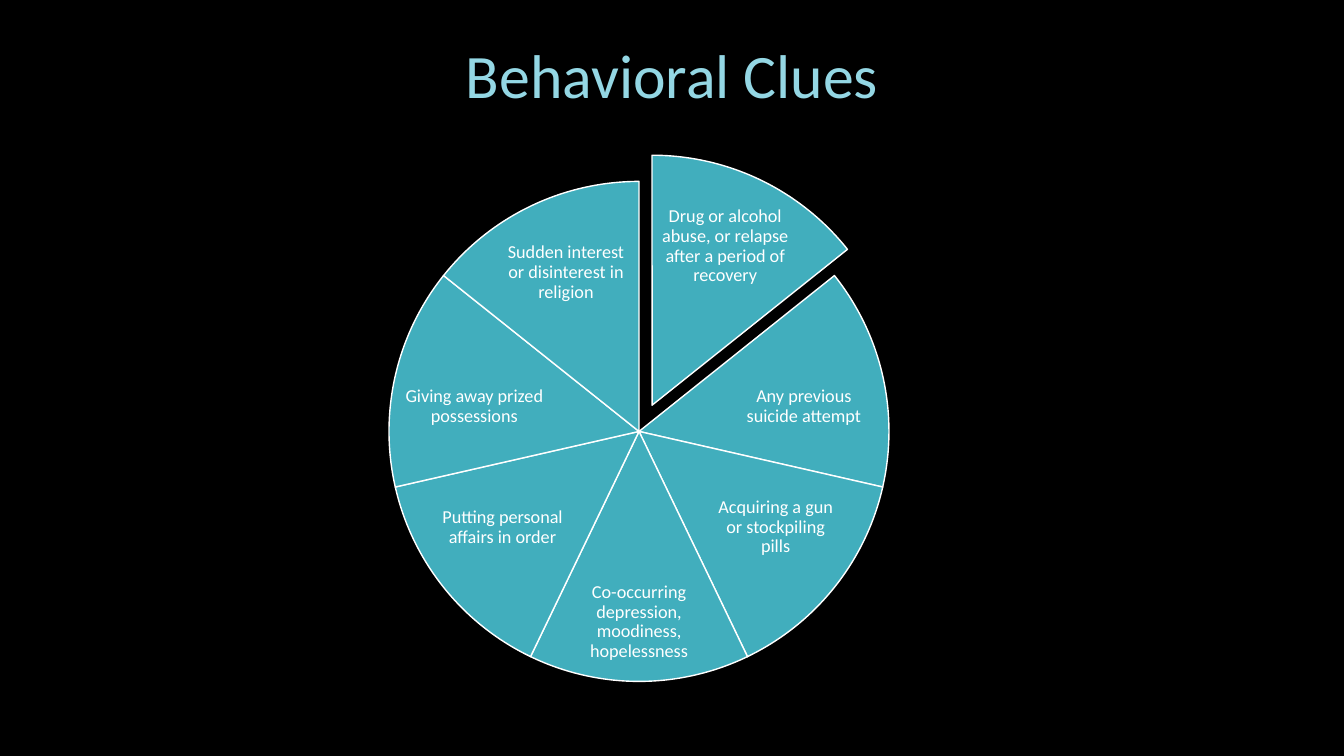
from dataclasses import dataclass

from pptx import Presentation
from pptx.dml.color import RGBColor
from pptx.enum.shapes import MSO_SHAPE
from pptx.enum.text import MSO_ANCHOR, PP_ALIGN
from pptx.slide import Slide
from pptx.util import Inches, Pt

PIE = MSO_SHAPE.PIE
CENTER = PP_ALIGN.CENTER
TOP = MSO_ANCHOR.TOP
MIDDLE = MSO_ANCHOR.MIDDLE

SLIDE_WIDTH = Inches(13.333)
SLIDE_HEIGHT = Inches(7.5)


@dataclass(frozen=True)
class Theme:
    font: str = "Calibri"
    background: RGBColor = RGBColor(0x00, 0x00, 0x00)
    title: RGBColor = RGBColor(0x94, 0xD7, 0xE4)
    wedge: RGBColor = RGBColor(0x41, 0xAE, 0xBD)
    light: RGBColor = RGBColor(0xFF, 0xFF, 0xFF)
    title_size: float = 44.1
    label_size: float = 13
    outline: float = 1
    line_spacing: float = 0.9


@dataclass(frozen=True)
class Box:
    """Left, top, width and height in percent of the slide."""

    left: float
    top: float
    width: float
    height: float

    def lengths(self) -> tuple[int, int, int, int]:
        return (
            across(self.left),
            down(self.top),
            across(self.width),
            down(self.height),
        )


@dataclass(frozen=True)
class Clue:
    """A wedge label, its offset from the wedge's tip and its size in percent."""

    text: str
    offset_x: float
    offset_y: float
    width: float
    height: float
    pulled_out: bool = False


THEME = Theme()
TITLE_BOX = Box(6.9, 5.33, 86.25, 19.33)
PIE_CENTER = (47.55, 57.07)
PIE_SIZE = (37.2, 66.13)
PULL = (0.97, -3.47)
START_DEGREES = 270
ANGLE_UNITS_PER_DEGREE = 0.6

CLUES = (
    Clue("Drug or alcohol abuse, or relapse after a period of recovery",
         5.44, -21, 10.2, 11.47, pulled_out=True),
    Clue("Any previous suicide attempt", 12.26, -3.27, 10.8, 12.13),
    Clue("Acquiring a gun or stockpiling pills", 10.16, 12.67, 9.75, 12.53),
    Clue("Co-occurring depression, moodiness, hopelessness", 0, 25.2, 9.98, 12.53),
    Clue("Putting personal affairs in order", -10.16, 12.67, 9.75, 12.53),
    Clue("Giving away prized possessions", -12.26, -3.27, 10.8, 12.13),
    Clue("Sudden interest or disinterest in religion", -5.44, -21, 10.2, 11.47),
)


def across(percent: float) -> int:
    return round(SLIDE_WIDTH * percent / 100)


def down(percent: float) -> int:
    return round(SLIDE_HEIGHT * percent / 100)


def centered_box(x: float, y: float, width: float, height: float) -> Box:
    return Box(x - width / 2, y - height / 2, width, height)


def add_text(
    slide: Slide,
    text: str,
    box: Box,
    *,
    size: float,
    color: RGBColor,
    anchor: MSO_ANCHOR = MIDDLE,
    inset_x: float = 0.02,
    inset_y: float = 0.02,
) -> None:
    frame = slide.shapes.add_textbox(*box.lengths()).text_frame
    frame.word_wrap = True
    frame.vertical_anchor = anchor
    frame.margin_left = frame.margin_right = Inches(inset_x)
    frame.margin_top = frame.margin_bottom = Inches(inset_y)
    paragraph = frame.paragraphs[0]
    paragraph.alignment = CENTER
    paragraph.line_spacing = THEME.line_spacing
    run = paragraph.add_run()
    run.text = text
    run.font.name = THEME.font
    run.font.size = Pt(size)
    run.font.color.rgb = color


def add_wedge(slide: Slide, box: Box, start: float, end: float) -> None:
    shape = slide.shapes.add_shape(PIE, *box.lengths())
    shape.shadow.inherit = False
    shape.adjustments[0] = start % 360 * ANGLE_UNITS_PER_DEGREE
    shape.adjustments[1] = end % 360 * ANGLE_UNITS_PER_DEGREE
    shape.fill.solid()
    shape.fill.fore_color.rgb = THEME.wedge
    shape.line.color.rgb = THEME.light
    shape.line.width = Pt(THEME.outline)


def add_clue(slide: Slide, clue: Clue, index: int) -> None:
    sweep = 360 / len(CLUES)
    start = START_DEGREES + index * sweep
    pull_x, pull_y = PULL if clue.pulled_out else (0, 0)
    x, y = PIE_CENTER[0] + pull_x, PIE_CENTER[1] + pull_y
    add_wedge(slide, centered_box(x, y, *PIE_SIZE), start, start + sweep)
    label_box = centered_box(
        x + clue.offset_x, y + clue.offset_y, clue.width, clue.height
    )
    add_text(slide, clue.text, label_box, size=THEME.label_size, color=THEME.light)


def main() -> None:
    presentation = Presentation()
    presentation.slide_width = SLIDE_WIDTH
    presentation.slide_height = SLIDE_HEIGHT
    slide = presentation.slides.add_slide(presentation.slide_layouts[6])
    slide.background.fill.solid()
    slide.background.fill.fore_color.rgb = THEME.background
    add_text(
        slide,
        "Behavioral Clues",
        TITLE_BOX,
        size=THEME.title_size,
        color=THEME.title,
        anchor=TOP,
        inset_x=0.1,
        inset_y=0.05,
    )
    for index, clue in enumerate(CLUES):
        add_clue(slide, clue, index)
    presentation.save("out.pptx")


if __name__ == "__main__":
    main()
